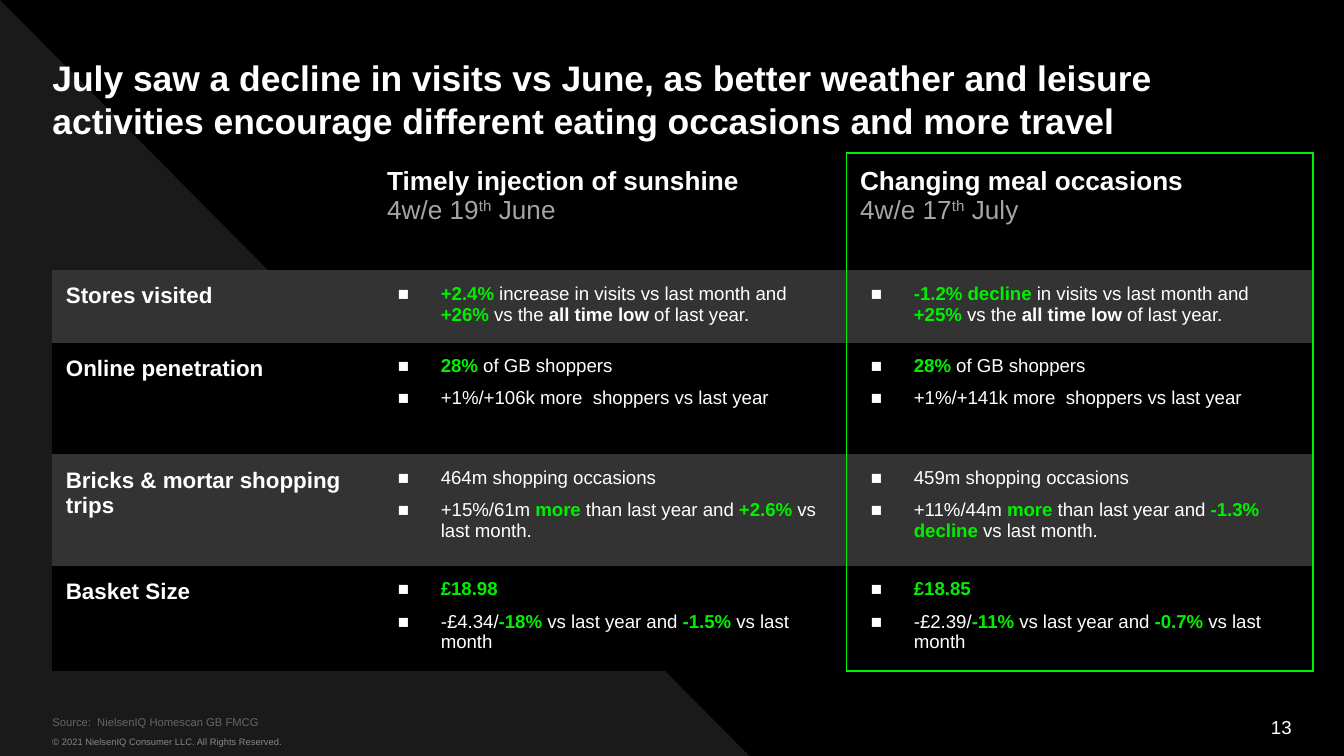
from lxml.etree import SubElement
from pptx import Presentation
from pptx.dml.color import RGBColor
from pptx.enum.shapes import MSO_SHAPE
from pptx.enum.text import MSO_ANCHOR, PP_ALIGN
from pptx.oxml.ns import qn
from pptx.util import Inches, Pt

BLACK, WHITE, GREEN = "000000", "FFFFFF", "00F000"
BAND, TRIANGLE = "333333", "1A1A1A"

# Style name: size, colour, bold, baseline shift in percent
STYLES = {
    "title": (19, WHITE, True, 0),
    "head": (14, WHITE, True, 0),
    "date": (14, "A5A5A5", False, 0),
    "ordinal": (14, "A5A5A5", False, 30),
    "label": (12, WHITE, True, 0),
    "body": (10, WHITE, False, 0),
    "strong": (10, WHITE, True, 0),
    "figure": (10, GREEN, True, 0),
    "source": (6, "666666", False, 0),
    "copyright": (5, "888888", False, 0),
}

TITLE = ("July saw a decline in visits vs June, as better weather and leisure "
         "activities encourage different eating occasions and more travel")

# Text boxes: text, style, (left, top, width, height), vertical inset, anchor, alignment
TEXTS = [
    ("© 2021 NielsenIQ Consumer LLC. All Rights Reserved.", "copyright",
     (0.39, 5.43, 5.54, 0.2), 0.05, MSO_ANCHOR.TOP, PP_ALIGN.LEFT),
    ("13", "body", (7.36, 5.26, 2.25, 0.3), 0.05, MSO_ANCHOR.MIDDLE, PP_ALIGN.RIGHT),
    ("Source:  NielsenIQ Homescan GB FMCG", "source",
     (0.39, 5.27, 8.92, 0.2), 0.1, MSO_ANCHOR.BOTTOM, PP_ALIGN.LEFT),
    (TITLE, "title", (0.39, 0.32, 9.22, 0.74), 0.1, MSO_ANCHOR.TOP, PP_ALIGN.LEFT),
]

# Periods: heading, day, month
PERIODS = [("Timely injection of sunshine", "4w/e 19", " June"),
           ("Changing meal occasions", "4w/e 17", " July")]

# Measures: label, then for each period its bullets, each a list of (text, style)
MEASURES = [
    ("Stores visited", [
        [[(change, "figure"), (f"{wording} in visits vs last month and ", "body"),
          (f"{yearly} ", "figure"), ("vs the ", "body"), ("all time low", "strong"),
          (" of last year.", "body")]]
        for change, wording, yearly in [("+2.4%", " increase", "+26%"),
                                        ("-1.2% decline", "", "+25%")]
    ]),
    ("Online penetration", [
        [[("28%", "figure"), (" of GB shoppers", "body")],
         [(f"{gain} more  shoppers vs last year", "body")]]
        for gain in ("+1%/+106k", "+1%/+141k")
    ]),
    ("Bricks & mortar shopping trips", [
        [[(f"{trips} shopping occasions", "body")],
         [(f"{gain} ", "body"), ("more", "figure"), (" than last year and ", "body"),
          (f"{monthly} ", "figure"), ("vs last month.", "body")]]
        for trips, gain, monthly in [("464m", "+15%/61m", "+2.6%"),
                                     ("459m", "+11%/44m", "-1.3% decline")]
    ]),
    ("Basket Size", [
        [[(spend, "figure")],
         [(f"{change}/", "body"), (f"{yearly} ", "figure"), ("vs last year and ", "body"),
          (f"{monthly} ", "figure"), ("vs last month", "body")]]
        for spend, change, yearly, monthly in [("£18.98", "-£4.34", "-18%", "-1.5%"),
                                               ("£18.85", "-£2.39", "-11%", "-0.7%")]
    ]),
]

TABLE_LEFT, TABLE_TOP = 0.39, 1.14
COLUMNS = [2.39, 3.52, 3.47]
ROWS = [0.87, 0.54, 0.83, 0.83, 0.67]


def colour(hex_string):
    return RGBColor.from_string(hex_string)


def paint(fill, hex_string):
    fill.solid()
    fill.fore_color.rgb = colour(hex_string)


def add_run(paragraph, text, style):
    size, hue, bold, baseline = STYLES[style]
    run = paragraph.add_run()
    run.text = text
    run.font.name = "Arial"
    run.font.size = Pt(size)
    run.font.bold = bold
    run.font.color.rgb = colour(hue)
    if baseline:
        run.font._element.set("baseline", str(baseline * 1000))


def add_bullet(paragraph):
    props = paragraph._p.get_or_add_pPr()
    props.set("marL", str(Inches(0.4)))
    props.set("indent", str(Inches(-0.32)))
    SubElement(SubElement(props, qn("a:buClr")), qn("a:srgbClr"), val=WHITE)
    SubElement(props, qn("a:buFont"), typeface="Arial")
    SubElement(props, qn("a:buChar"), char="■")


def fill_text(frame, paragraphs, bulleted=False):
    for index, runs in enumerate(paragraphs):
        paragraph = frame.add_paragraph() if index else frame.paragraphs[0]
        if bulleted:
            add_bullet(paragraph)
            if index:
                paragraph.space_before = Pt(6)
        for text, style in runs:
            add_run(paragraph, text, style)


def set_borders(cell, green_sides):
    """Draw the named sides (L, R, T, B) in green and clear the others."""
    props = cell._tc.get_or_add_tcPr()
    for side in "LRTB":
        line = SubElement(props, qn(f"a:ln{side}"), w=str(Pt(1)))
        if side in green_sides:
            SubElement(SubElement(line, qn("a:solidFill")), qn("a:srgbClr"), val=GREEN)
        else:
            SubElement(line, qn("a:noFill"))


def highlight_sides(row, column):
    """Sides of a cell that lie on the frame around the last column."""
    last = len(COLUMNS) - 1
    if column == last:
        return "LR" + ("T" if row == 0 else "") + ("B" if row == len(ROWS) - 1 else "")
    return "R" if column == last - 1 else ""


def add_text(slide, text, style, box, inset, anchor, alignment):
    frame = slide.shapes.add_textbox(*map(Inches, box)).text_frame
    frame.word_wrap = True
    frame.margin_left = frame.margin_right = 0
    frame.margin_top = frame.margin_bottom = Inches(inset)
    frame.vertical_anchor = anchor
    fill_text(frame, [[(text, style)]])
    frame.paragraphs[0].alignment = alignment


def add_measures(slide):
    table = slide.shapes.add_table(
        len(ROWS), len(COLUMNS), Inches(TABLE_LEFT), Inches(TABLE_TOP),
        Inches(sum(COLUMNS)), Inches(sum(ROWS))).table
    for column, width in zip(table.columns, COLUMNS):
        column.width = Inches(width)
    for row, height in zip(table.rows, ROWS):
        row.height = Inches(height)

    for row in range(len(ROWS)):
        for column in range(len(COLUMNS)):
            cell = table.cell(row, column)
            cell.margin_left = cell.margin_right = Inches(0.1)
            cell.margin_top = cell.margin_bottom = Inches(0.1)
            set_borders(cell, highlight_sides(row, column))
            if row == 0:
                cell.fill.background()
            else:
                paint(cell.fill, BAND if row % 2 else BLACK)

    for column, (heading, day, month) in enumerate(PERIODS, 1):
        fill_text(table.cell(0, column).text_frame, [
            [(heading, "head")],
            [(day, "date"), ("th", "ordinal"), (month, "date")]])
    for row, (label, periods) in enumerate(MEASURES, 1):
        fill_text(table.cell(row, 0).text_frame, [[(label, "label")]])
        for column, bullets in enumerate(periods, 1):
            fill_text(table.cell(row, column).text_frame, bullets, bulleted=True)


def main():
    deck = Presentation()
    deck.slide_width, deck.slide_height = Inches(10), Inches(10 * 9 / 16)
    slide = deck.slides.add_slide(deck.slide_layouts[6])
    paint(slide.background.fill, BLACK)

    triangle = slide.shapes.add_shape(
        MSO_SHAPE.RIGHT_TRIANGLE, 0, 0, Inches(5.59), Inches(5.64))
    triangle.shadow.inherit = False
    paint(triangle.fill, TRIANGLE)
    triangle.line.fill.background()

    for entry in TEXTS:
        add_text(slide, *entry)
    add_measures(slide)
    deck.save("out.pptx")


if __name__ == "__main__":
    main()
